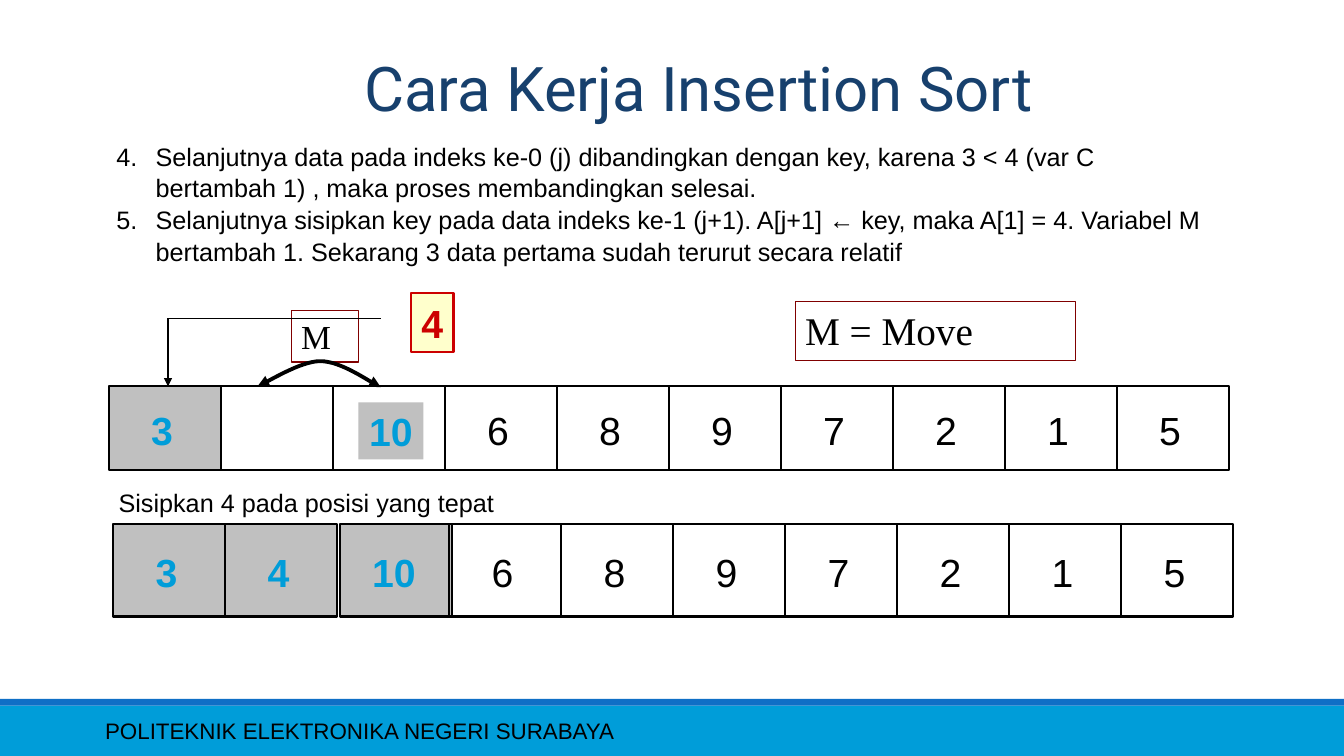
from typing import NamedTuple, Optional

from lxml import etree
from pptx import Presentation
from pptx import util as u
from pptx.dml.color import RGBColor
from pptx.enum import shapes, text
from pptx.oxml import ns

BLACK = RGBColor(0x00, 0x00, 0x00)
WHITE = RGBColor(0xFF, 0xFF, 0xFF)
GREY = RGBColor(0xC0, 0xC0, 0xC0)
SKY = RGBColor(0x00, 0x9D, 0xD9)
BLUE = RGBColor(0x0F, 0x6F, 0xC6)
NAVY = RGBColor(0x17, 0x40, 0x6D)
RED = RGBColor(0xCC, 0x00, 0x00)
MAROON = RGBColor(0x80, 0x00, 0x00)
CREAM = RGBColor(0xFF, 0xFF, 0xCC)

# The slide is a grid of 12 columns and 9 rows; an array cell is one column wide
prs = Presentation()
prs.slide_width, prs.slide_height = u.Inches(13.33), u.Inches(7.5)
COL, ROW = prs.slide_width / 12, prs.slide_height / 9


class Area(NamedTuple):
    x: float
    y: float
    w: float
    h: float

    def emu(self) -> tuple:
        return (round(self.x * COL), round(self.y * ROW),
                round(self.w * COL), round(self.h * ROW))


class Font(NamedTuple):
    size: float
    color: RGBColor = BLACK
    name: str = "Arial"
    bold: bool = False


class Box(NamedTuple):
    area: Area
    label: str = ""
    font: Font = Font(18)
    fill: Optional[RGBColor] = None
    line: Optional[RGBColor] = None
    width: float = 1.5
    align: text.PP_ALIGN = text.PP_ALIGN.LEFT
    anchor: text.MSO_ANCHOR = text.MSO_ANCHOR.TOP


class Array(NamedTuple):
    x: float
    y: float
    h: float
    values: list
    sorted_cells: set
    nudged: dict


DIGIT = Font(28)
SORTED = Font(28, SKY, bold=True)
CENTER, MIDDLE = text.PP_ALIGN.CENTER, text.MSO_ANCHOR.MIDDLE

BANDS = [
    Box(Area(0, 8.4, 12, 0.6), fill=SKY),
    Box(Area(0, 8.32, 12, 0.08), fill=BLUE),
    Box(Area(0.85, 8.46, 7.57, 0.48), "POLITEKNIK ELEKTRONIKA NEGERI SURABAYA",
        Font(16), anchor=MIDDLE),
]
ARRAYS = [
    Array(1.01, 6.24, 1.1, ["3", "4", "10", "6", "8", "9", "7", "2", "1", "5"],
          {0, 1, 2}, {2: 0.03}),
    Array(0.97, 4.6, 1, ["3", "", "", "6", "8", "9", "7", "2", "1", "5"], {0}, {}),
]
LABELS = [
    Box(Area(0.97, 5.74, 10.9, 0.48), "Sisipkan 4 pada posisi yang tepat"),
    Box(Area(3.2, 4.79, 0.58, 0.68), "10", SORTED, GREY, align=CENTER, anchor=MIDDLE),
    Box(Area(3.67, 3.49, 0.38, 0.7), "4", Font(28, RED, bold=True), CREAM, RED,
        align=CENTER, anchor=MIDDLE),
    Box(Area(2.6, 3.7, 0.6, 0.61), "M", Font(24, name="Times New Roman"),
        line=MAROON, width=0.75),
    Box(Area(7.1, 3.59, 2.5, 0.7), "M = Move", Font(28, name="Times New Roman"),
        line=MAROON, width=0.75),
]
STEPS = [
    "Selanjutnya data pada indeks ke-0 (j) dibandingkan dengan key, karena 3 < 4 (var C "
    "bertambah 1) , maka proses membandingkan selesai.",
    "Selanjutnya sisipkan key pada data indeks ke-1 (j+1). A[j+1] ← key, maka A[1] = 4. "
    "Variabel M bertambah 1. Sekarang 3 data pertama sudah terurut secara relatif",
]
MOVE_CURVES = [
    [(2.3, 4.6), (2.39, 4.55), (2.68, 4.3), (2.86, 4.3)],
    [(2.86, 4.3), (3.05, 4.3), (3.29, 4.54), (3.4, 4.61)],
]
KEY_PATH = [(3.4, 3.79), (1.5, 3.79), (1.5, 4.6)]


def add_run(p, label: str, font: Font) -> None:
    r = p.add_run()
    r.text = label
    r.font.size, r.font.name, r.font.bold = u.Pt(font.size), font.name, font.bold
    r.font.color.rgb = font.color


def add_box(s, box: Box):
    sp = s.shapes.add_shape(shapes.MSO_SHAPE.RECTANGLE, *box.area.emu())
    sp.shadow.inherit = False
    if box.fill is None:
        sp.fill.background()
    else:
        sp.fill.solid()
        sp.fill.fore_color.rgb = box.fill
    if box.line is None:
        sp.line.fill.background()
    else:
        sp.line.color.rgb, sp.line.width = box.line, u.Pt(box.width)
    tf = sp.text_frame
    tf.vertical_anchor = box.anchor
    tf.word_wrap = box.align != CENTER
    p = tf.paragraphs[0]
    p.alignment = box.align
    if box.label:
        add_run(p, box.label, box.font)
    return sp


def add_array(s, array: Array) -> None:
    for i, value in enumerate(array.values):
        done = i in array.sorted_cells
        x = array.x + i + array.nudged.get(i, 0)
        sp = add_box(s, Box(Area(x, array.y, 1, array.h), value,
                            SORTED if done else DIGIT, GREY if done else None, BLACK,
                            align=CENTER, anchor=MIDDLE))
        sp.text_frame.margin_right = u.Inches(0.15)
        sp.text_frame.margin_top = u.Inches(0.08)


def add_arrowheads(sp, *ends: str) -> None:
    ln = sp.element.spPr.find(ns.qn("a:ln"))
    for end in ends:
        etree.SubElement(ln, ns.qn(f"a:{end}"), type="triangle")


def bezier(points: list, t: float) -> tuple:
    weights = ((1 - t) ** 3, 3 * t * (1 - t) ** 2, 3 * t ** 2 * (1 - t), t ** 3)
    x, y = (sum(k * v for k, v in zip(weights, axis)) for axis in zip(*points))
    return round(x * COL), round(y * ROW)


def add_move_arrow(s, curves: list, steps: int = 16) -> None:
    points = [bezier(c, i / steps) for c in curves for i in range(1, steps + 1)]
    builder = s.shapes.build_freeform(*bezier(curves[0], 0))
    builder.add_line_segments(points, close=False)
    sp = builder.convert_to_shape()
    sp.shadow.inherit = False
    sp.fill.background()
    sp.line.color.rgb, sp.line.width = BLACK, u.Pt(2.75)
    add_arrowheads(sp, "headEnd", "tailEnd")


def add_line(s, start: tuple, end: tuple, arrow: bool) -> None:
    ends = [round(v * unit) for pt in (start, end) for v, unit in zip(pt, (COL, ROW))]
    sp = s.shapes.add_connector(shapes.MSO_CONNECTOR.STRAIGHT, *ends)
    sp.line.color.rgb, sp.line.width = BLACK, u.Pt(0.75)
    if arrow:
        add_arrowheads(sp, "tailEnd")
    etree.SubElement(sp.element.spPr, ns.qn("a:effectLst"))


def add_steps(s, area: Area, steps: list, first: int) -> None:
    tf = s.shapes.add_textbox(*area.emu()).text_frame
    tf.word_wrap = True
    for i, step in enumerate(steps):
        p = tf.add_paragraph() if i else tf.paragraphs[0]
        pPr = p._p.get_or_add_pPr()
        pPr.set("marL", str(u.Inches(0.39)))
        pPr.set("indent", str(-u.Inches(0.39)))
        etree.SubElement(pPr, ns.qn("a:buAutoNum"), type="arabicPeriod", startAt=str(first))
        p.line_spacing = 1.05
        add_run(p, step, Font(18))


def main() -> None:
    s = prs.slides.add_slide(prs.slide_layouts[5])
    s.background.fill.solid()
    s.background.fill.fore_color.rgb = WHITE

    # Title
    title = s.shapes.title
    title.left, title.top, title.width, title.height = Area(1.13, 0.29, 10.22, 1.5).emu()
    tf = title.text_frame
    tf.vertical_anchor, tf.auto_size = MIDDLE, text.MSO_AUTO_SIZE.NONE
    tf.paragraphs[0].alignment = CENTER
    add_run(tf.paragraphs[0], "Cara Kerja Insertion Sort", Font(44, NAVY, "Roboto"))

    # Footer, arrays and labels
    for band in BANDS:
        add_box(s, band)
    for array in ARRAYS:
        add_array(s, array)
    for label in LABELS:
        add_box(s, label)

    # Arrows for the moved value and the inserted key
    add_move_arrow(s, MOVE_CURVES)
    for start, end in zip(KEY_PATH, KEY_PATH[1:]):
        add_line(s, start, end, arrow=end == KEY_PATH[-1])

    # Numbered explanation
    add_steps(s, Area(0.95, 1.6, 9.92, 1.94), STEPS, first=4)
    prs.save("out.pptx")


if __name__ == "__main__":
    main()
